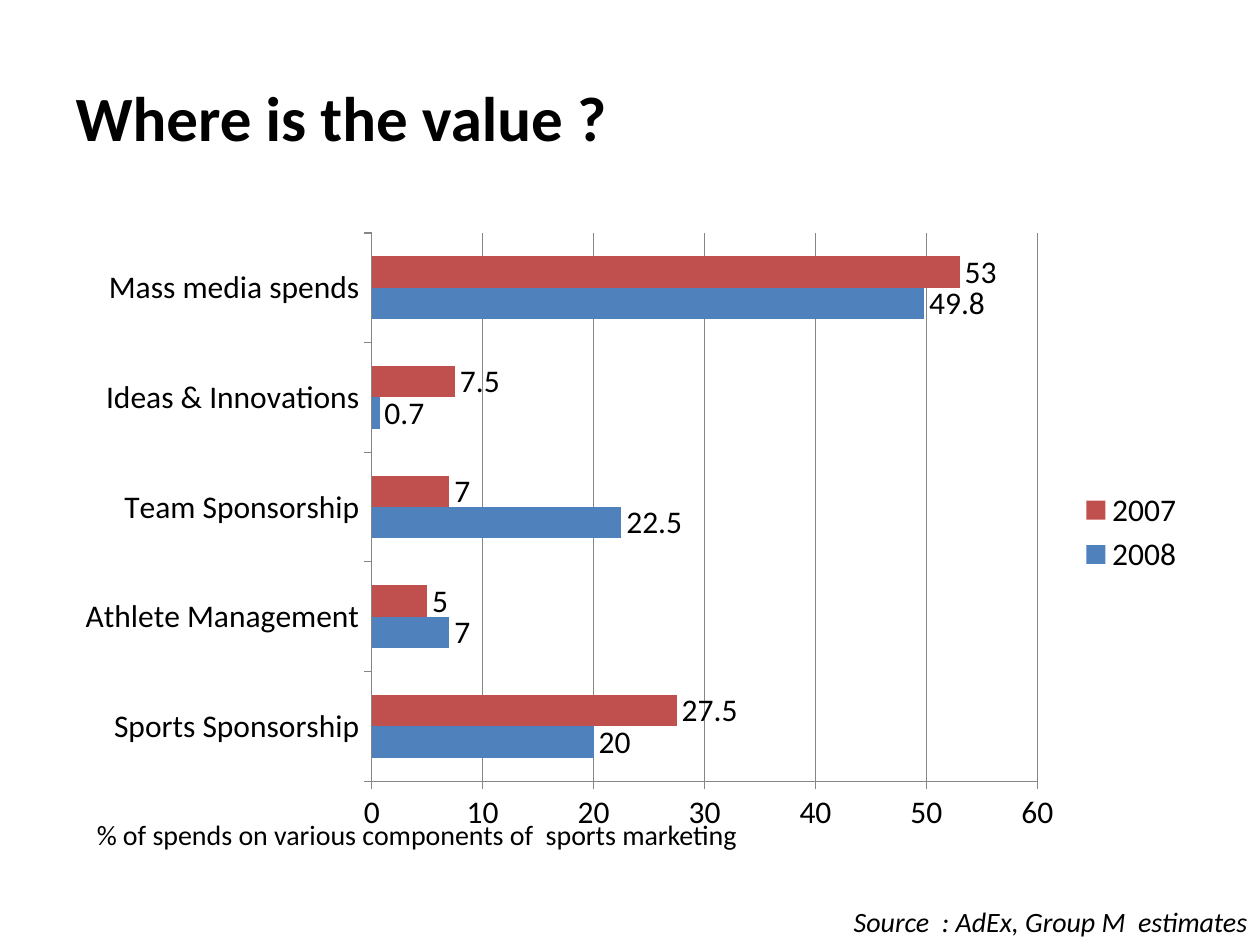
from pptx import Presentation
from pptx.chart.data import CategoryChartData
from pptx.dml.color import RGBColor
from pptx.enum.chart import XL_CHART_TYPE as ChartType
from pptx.enum.chart import XL_LABEL_POSITION as LabelPosition
from pptx.enum.chart import XL_LEGEND_POSITION as LegendPosition
from pptx.enum.chart import XL_TICK_MARK as TickMark
from pptx.enum.text import MSO_ANCHOR as Anchor
from pptx.enum.text import PP_ALIGN as Align
from pptx.util import Inches, Pt

FONT = "Calibri"
BLACK = "000000"
GRAY = "868686"
CATEGORIES = ["Sports Sponsorship", "Athlete Management", "Team Sponsorship",
              "Ideas & Innovations", "Mass media spends"]
SPENDS = [
    ("2008", [20, 7, 22.5, 0.7, 49.8], "4F81BD"),
    ("2007", [27.5, 5, 7, 7.5, 53], "C0504D"),
]


def color(value):
    return RGBColor.from_string(value)


def set_font(font, size, bold=False, italic=False):
    font.name = FONT
    font.size = Pt(size)
    font.bold = bold
    font.italic = italic
    font.color.rgb = color(BLACK)


def fill_text(shape, text, size, anchor, align=Align.LEFT, **style):
    frame = shape.text_frame
    frame.word_wrap = True
    frame.vertical_anchor = anchor
    frame.text = text
    paragraph = frame.paragraphs[0]
    paragraph.alignment = align
    set_font(paragraph.font, size, **style)


def place_title(slide, left, top, width, height):
    title = slide.shapes.title
    title.left, title.top = Inches(left), Inches(top)
    title.width, title.height = Inches(width), Inches(height)
    fill_text(title, "Where is the value ?", 36, Anchor.MIDDLE, bold=True)


def add_text(slide, box, text, anchor, **style):
    shape = slide.shapes.add_textbox(*map(Inches, box))
    fill_text(shape, text, 16, anchor, **style)


def add_spend_chart(slide, left, top, width, height):
    data = CategoryChartData()
    data.categories = CATEGORIES
    for year, values, _ in SPENDS:
        data.add_series(year, values)
    chart = slide.shapes.add_chart(
        ChartType.BAR_CLUSTERED, Inches(left), Inches(top),
        Inches(width), Inches(height), data).chart
    set_font(chart.font, 18)
    chart.has_title = False
    chart.has_legend = True
    chart.legend.position = LegendPosition.RIGHT
    chart.legend.include_in_layout = False

    for axis in (chart.category_axis, chart.value_axis):
        axis.major_tick_mark = TickMark.CROSS if axis is chart.value_axis else TickMark.OUTSIDE
        axis.minor_tick_mark = TickMark.NONE
        axis.format.line.color.rgb = color(GRAY)
    spend_axis = chart.value_axis
    spend_axis.minimum_scale, spend_axis.maximum_scale = 0, 60
    spend_axis.major_unit = 10
    spend_axis.major_tick_mark = TickMark.OUTSIDE
    spend_axis.has_major_gridlines = True
    spend_axis.major_gridlines.format.line.color.rgb = color(GRAY)

    plot = chart.plots[0]
    plot.gap_width = 150
    plot.overlap = 0
    plot.vary_by_categories = False
    for series, (_, _, fill) in zip(plot.series, SPENDS):
        series.format.fill.solid()
        series.format.fill.fore_color.rgb = color(fill)
        labels = series.data_labels
        labels.show_value = True
        labels.position = LabelPosition.OUTSIDE_END
        set_font(labels.font, 18)


def main():
    deck = Presentation()
    deck.slide_width, deck.slide_height = Inches(10), Inches(7.5)
    slide = deck.slides.add_slide(deck.slide_layouts[5])
    place_title(slide, 0.5, 0.3, 9, 1.25)
    add_spend_chart(slide, 0.5, 1.75, 9, 4.95)
    add_text(slide, (0.67, 6, 9, 1.25),
             "% of spends on various components of  sports marketing", Anchor.MIDDLE)
    add_text(slide, (6, 7.13, 4, 0.37),
             "Source  : AdEx, Group M  estimates", Anchor.TOP,
             align=Align.RIGHT, italic=True)
    deck.save("out.pptx")


if __name__ == "__main__":
    main()
